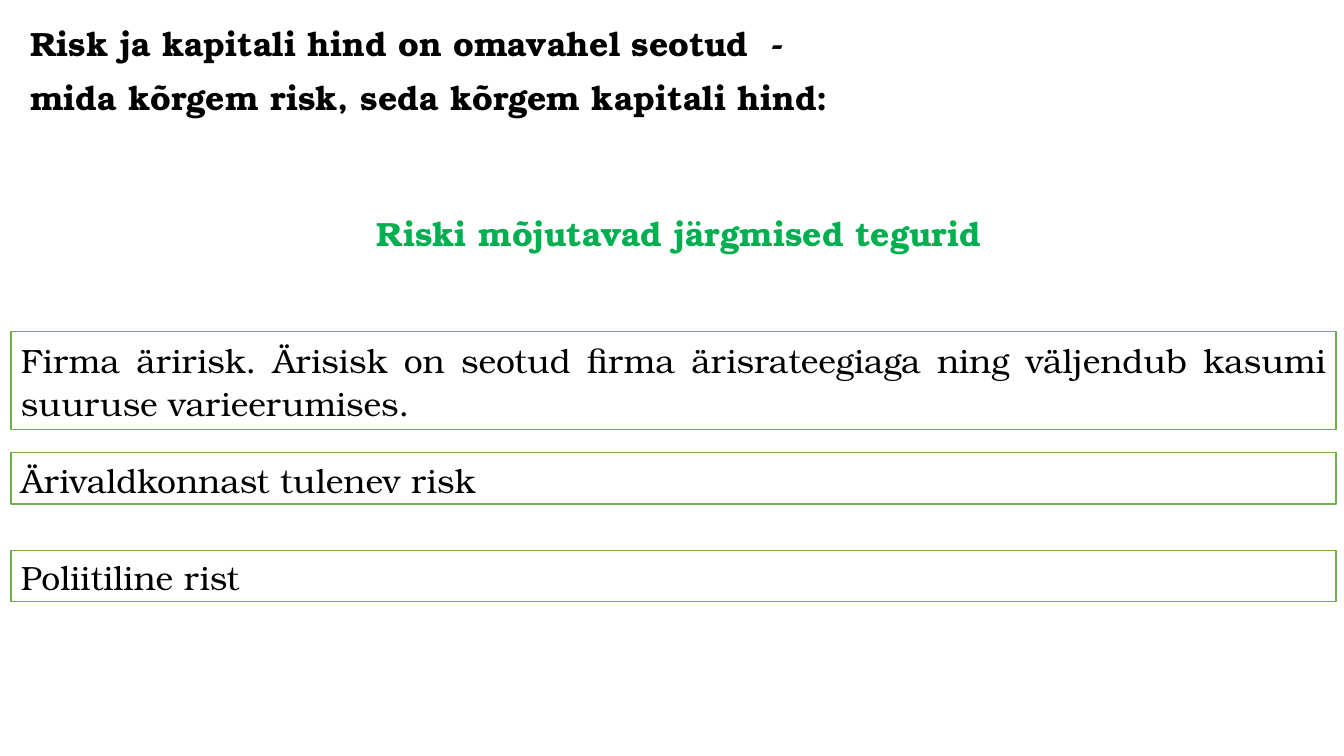
from pptx import Presentation
from pptx.dml.color import RGBColor
from pptx.enum.shapes import MSO_SHAPE
from pptx.enum.text import MSO_ANCHOR, MSO_AUTO_SIZE, PP_ALIGN
from pptx.util import Inches, Pt

FONT = "TeX Gyre Bonum"
BLACK, WHITE, GREEN, BORDER = "000000", "FFFFFF", "00B050", "70AD47"

TITLE = ["Risk ja kapitali hind on omavahel seotud  -",
         "mida kõrgem risk, seda kõrgem kapitali hind:"]
SUBTITLE = "Riski mõjutavad järgmised tegurid"
FACTORS = [  # text, top, height
    ("Firma äririsk. Ärisisk on seotud firma ärisrateegiaga ning väljendub "
     "kasumi suuruse varieerumises.", 3.29, 0.97),
    ("Ärivaldkonnast tulenev risk", 4.49, 0.51),
    ("Poliitiline rist", 5.46, 0.51),
]
FACTOR_LEFT, FACTOR_WIDTH = 0.11, 13.14


def rgb(color):
    return RGBColor.from_string(color)


def write(sp, lines, color=BLACK, bold=False, align=PP_ALIGN.LEFT,
          spacing=1.07, after=0, anchor=MSO_ANCHOR.TOP, wrap=True):
    tf = sp.text_frame
    tf.text = "\n".join(lines)
    tf.word_wrap = wrap
    tf.auto_size = MSO_AUTO_SIZE.NONE
    tf.vertical_anchor = anchor
    for p in tf.paragraphs:
        p.alignment = align
        p.line_spacing = spacing
        p.space_after = Pt(after)
        for r in p.runs:
            r.font.name = FONT
            r.font.size = Pt(24)
            r.font.bold = bold
            r.font.color.rgb = rgb(color)


def add_factor(s, text, top, height):
    sp = s.shapes.add_shape(MSO_SHAPE.RECTANGLE, Inches(FACTOR_LEFT), Inches(top),
                            Inches(FACTOR_WIDTH), Inches(height))
    sp.shadow.inherit = False
    sp.fill.solid()
    sp.fill.fore_color.rgb = rgb(WHITE)
    sp.line.color.rgb = rgb(BORDER)
    sp.line.width = Pt(1)
    write(sp, [text], align=PP_ALIGN.JUSTIFY, anchor=MSO_ANCHOR.MIDDLE)


def main():
    prs = Presentation()
    prs.slide_width, prs.slide_height = Inches(13.33), Inches(7.5)
    s = prs.slides.add_slide(prs.slide_layouts[5])

    title = s.shapes.title
    title.left, title.top = Inches(0.2), Inches(0.15)
    title.width, title.height = Inches(12.96), Inches(1.08)
    write(title, TITLE, bold=True, after=8)

    subtitle = s.shapes.add_textbox(Inches(3.64), Inches(2.06), Inches(6.25), Inches(0.5))
    write(subtitle, [SUBTITLE], color=GREEN, bold=True, spacing=1.0, wrap=False)

    for factor in FACTORS:
        add_factor(s, *factor)

    prs.save("out.pptx")


if __name__ == "__main__":
    main()
